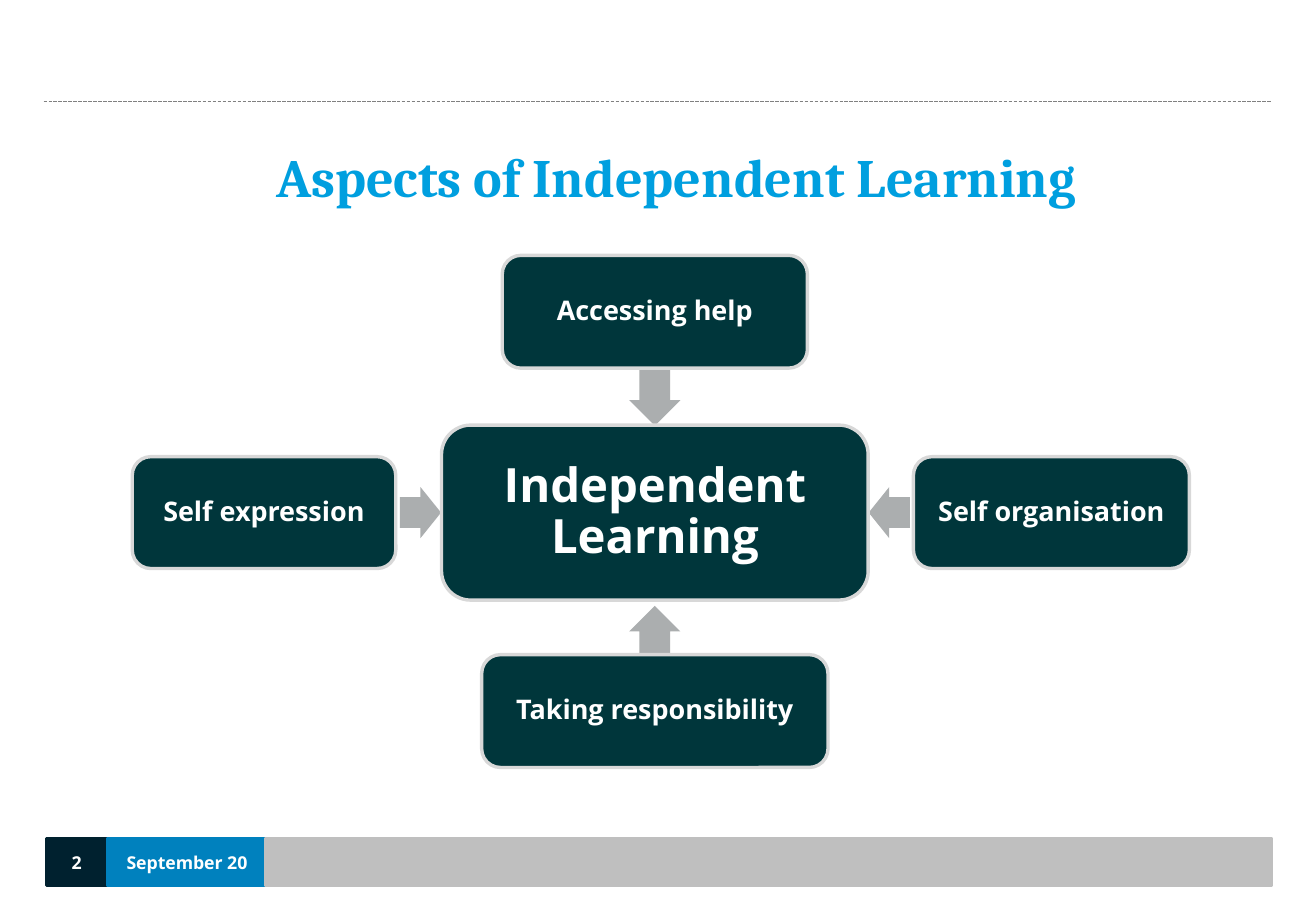
from dataclasses import dataclass

from lxml import etree
from pptx import Presentation
from pptx.dml.color import RGBColor
from pptx.enum import dml, shapes, text
from pptx.oxml.ns import qn
from pptx.util import Cm, Pt

MID_X, MID_Y = 13.69, 10.72
FOOTER_Y, FOOTER_H = 17.53, 0.99
BODY = {"name": "Open Sans", "bold": True}
FRAME = {
    "margin_left": 0, "margin_top": 0, "margin_right": 0, "margin_bottom": 0,
    "vertical_anchor": text.MSO_ANCHOR.MIDDLE,
}
MSO = shapes.MSO_SHAPE


@dataclass
class Node:
    label: str
    x: float
    y: float
    w: float
    h: float
    size: float = 16


@dataclass
class Arrow:
    kind: MSO
    x: float
    y: float
    w: float
    h: float


@dataclass
class FooterCell:
    label: str
    x: float
    w: float
    color: str


NODES = [
    Node("Independent Learning", MID_X, MID_Y, 8.92, 3.66, 28),
    Node("Accessing help", MID_X, 6.52, 6.38, 2.36),
    Node("Self organisation", 21.98, MID_Y, 5.77, 2.34),
    Node("Taking responsibility", MID_X, 14.87, 7.24, 2.36),
    Node("Self expression", 5.52, MID_Y, 5.51, 2.34),
]
ARROWS = [
    Arrow(MSO.DOWN_ARROW, MID_X, 8.31, 1.07, 1.19),
    Arrow(MSO.LEFT_ARROW, 18.59, MID_Y, 0.86, 1.07),
    Arrow(MSO.UP_ARROW, MID_X, 13.23, 1.07, 1.12),
    Arrow(MSO.RIGHT_ARROW, 8.79, MID_Y, 0.86, 1.07),
]
FOOTER = [
    FooterCell("2", 0.97, 1.27, "00212F"),
    FooterCell("September 20", 2.26, 3.3, "0081BE"),
    FooterCell("", 5.56, 21.01, "BFBFBF"),
]


def rgb(value: str) -> RGBColor:
    return RGBColor.from_string(value)


def apply(target, values: dict) -> None:
    for name, value in values.items():
        setattr(target, name, value)


def write(sp, label: str, color: str, font: dict, wrap: bool = True) -> None:
    tf = sp.text_frame
    apply(tf, {**FRAME, "word_wrap": wrap})
    p = tf.paragraphs[0]
    p.alignment = text.PP_ALIGN.CENTER
    r = p.add_run()
    r.text = label
    apply(r.font, font)
    r.font.color.rgb = rgb(color)


def add_block(slide, kind: MSO, x: float, y: float, w: float, h: float,
              fill: str, line: str = ""):
    sp = slide.shapes.add_shape(kind, Cm(x), Cm(y), Cm(w), Cm(h))
    sp.shadow.inherit = False
    sp.fill.solid()
    sp.fill.fore_color.rgb = rgb(fill)
    if line:
        sp.line.color.rgb = rgb(line)
        sp.line.width = Pt(2)
    else:
        sp.line.fill.background()
    return sp


def add_footer_cell(slide, cell: FooterCell) -> None:
    sp = add_block(slide, MSO.RECTANGLE, cell.x, FOOTER_Y, cell.w, FOOTER_H,
                   cell.color, cell.color)
    if cell.label:
        write(sp, cell.label, "FFFFFF", {**BODY, "size": Pt(10.5)}, wrap=False)


def add_node(slide, node: Node) -> None:
    sp = add_block(slide, MSO.ROUNDED_RECTANGLE, node.x - node.w / 2,
                   node.y - node.h / 2, node.w, node.h, "00363B", "D8D8D8")
    write(sp, node.label, "FFFFFF", {**BODY, "size": Pt(node.size)})
    sp.text_frame.paragraphs[0].line_spacing = 0.9


def add_arrow(slide, arrow: Arrow) -> None:
    sp = add_block(slide, arrow.kind, arrow.x - arrow.w / 2,
                   arrow.y - arrow.h / 2, arrow.w, arrow.h, "ABAEAF")
    sp.adjustments[0] = 0.6
    sp.adjustments[1] = 0.5


def add_rule(slide) -> None:
    line = slide.shapes.add_connector(
        shapes.MSO_CONNECTOR.STRAIGHT, Cm(0.91), Cm(2.13), Cm(26.57), Cm(2.13))
    line.line.color.rgb = rgb("808080")
    line.line.width = Pt(0.75)
    line.line.dash_style = dml.MSO_LINE.SQUARE_DOT
    etree.SubElement(line._element.spPr, qn("a:effectLst"))


def add_title(slide) -> None:
    title = slide.shapes.title
    apply(title, {"left": Cm(2.57), "top": Cm(2.54),
                  "width": Cm(23.39), "height": Cm(2.26)})
    write(title, "Aspects of Independent Learning ", "009FDF",
          {"name": "Cambria", "bold": True, "size": Pt(32)})


def main() -> None:
    prs = Presentation()
    prs.slide_width, prs.slide_height = Cm(27.51), Cm(19.05)
    slide = prs.slides.add_slide(prs.slide_layouts[5])
    add_title(slide)
    add_rule(slide)
    for cell in FOOTER:
        add_footer_cell(slide, cell)
    for arrow in ARROWS:
        add_arrow(slide, arrow)
    for node in NODES:
        add_node(slide, node)
    prs.save("out.pptx")


if __name__ == "__main__":
    main()
